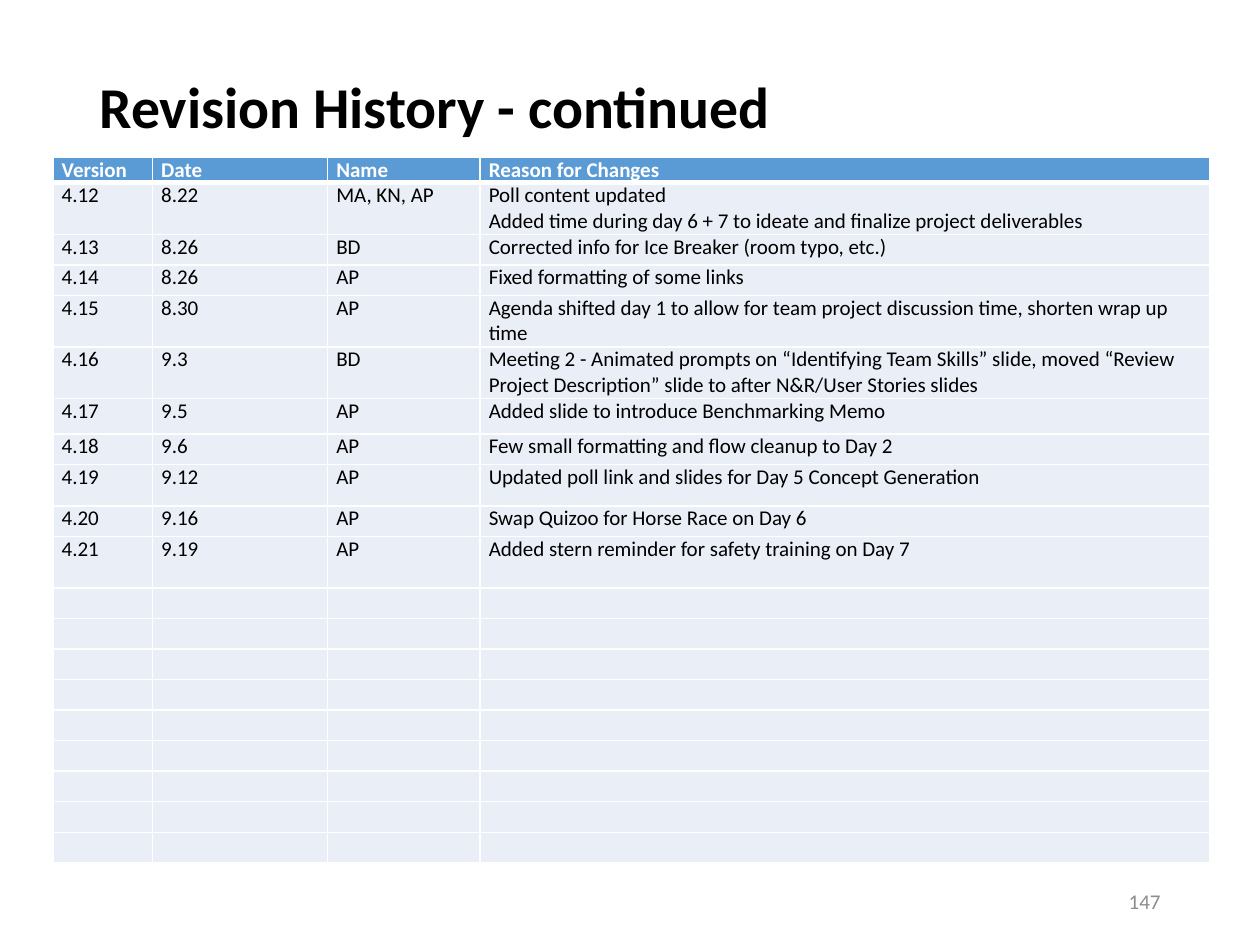
from lxml import etree
from pptx import Presentation
from pptx import util as u
from pptx.dml.color import RGBColor
from pptx.enum import text
from pptx.oxml import ns

BLACK = RGBColor(0x00, 0x00, 0x00)
WHITE = RGBColor(0xFF, 0xFF, 0xFF)
GRAY = RGBColor(0x8C, 0x8C, 0x8C)
HEADER_BLUE = RGBColor(0x5B, 0x9B, 0xD5)
BODY_BLUE = RGBColor(0xEA, 0xEF, 0xF7)

COLUMN_WIDTHS = [0.79, 1.39, 1.21, 5.79]
TABLE_HEIGHT = 5.6
HEADERS = ["Version", "Date", "Name", "Reason for Changes"]
REVISIONS = [
    ("4.12", "8.22", "MA, KN, AP",
     "Poll content updated\n"
     "Added time during day 6 + 7 to ideate and finalize project deliverables"),
    ("4.13", "8.26", "BD", "Corrected info for Ice Breaker (room typo, etc.)"),
    ("4.14", "8.26", "AP", "Fixed formatting of some links"),
    ("4.15", "8.30", "AP",
     "Agenda shifted day 1 to allow for team project discussion time, shorten wrap up time"),
    ("4.16", "9.3", "BD",
     "Meeting 2 - Animated prompts on “Identifying Team Skills” slide, moved “Review "
     "Project Description” slide to after N&R/User Stories slides"),
    ("4.17", "9.5", "AP", "Added slide to introduce Benchmarking Memo"),
    ("4.18", "9.6", "AP", "Few small formatting and flow cleanup to Day 2"),
    ("4.19", "9.12", "AP", "Updated poll link and slides for Day 5 Concept Generation"),
    ("4.20", "9.16", "AP", "Swap Quizoo for Horse Race on Day 6"),
    ("4.21", "9.19", "AP", "Added stern reminder for safety training on Day 7"),
]
EMPTY_ROWS = 9
# Rows not listed here share the remaining table height equally.
SPECIAL_HEIGHTS = {0: 0.2, 1: 0.41, 4: 0.41, 5: 0.41, 6: 0.28, 8: 0.33, 10: 0.41}


def write_text(frame, content, *, font="Calibri", size=12, color=BLACK, bold=False,
               align=text.PP_ALIGN.LEFT, line_spacing=None):
    """Fill a text frame, one paragraph per line of content."""
    for index, line in enumerate(content.split("\n")):
        paragraph = frame.add_paragraph() if index else frame.paragraphs[0]
        paragraph.alignment = align
        if line_spacing:
            paragraph.line_spacing = line_spacing
        if not line:
            # Keeps an empty cell from growing to the default text size.
            etree.SubElement(paragraph._p, ns.qn("a:endParaRPr"), sz=str(size * 100))
            continue
        run = paragraph.add_run()
        run.text = line
        run.font.name = font
        run.font.size = u.Pt(size)
        run.font.bold = bold
        run.font.color.rgb = color


def set_borders(cell, bottom_width):
    """Draw white cell borders; they must precede the fill in the XML."""
    properties = cell._tc.get_or_add_tcPr()
    for side, width in (("L", 1), ("R", 1), ("T", 1), ("B", bottom_width)):
        line = etree.SubElement(properties, ns.qn(f"a:ln{side}"), w=str(u.Pt(width)))
        fill = etree.SubElement(line, ns.qn("a:solidFill"))
        etree.SubElement(fill, ns.qn("a:srgbClr"), val=str(WHITE))


class SlideBuilder:
    def __init__(self, slide, font="Calibri"):
        self.slide = slide
        self.font = font

    def text_box(self, content, left, top, width, height, *,
                 anchor=text.MSO_ANCHOR.MIDDLE, top_inset=0.05, **style):
        shape = self.slide.shapes.add_textbox(*map(u.Inches, (left, top, width, height)))
        frame = shape.text_frame
        frame.word_wrap = True
        frame.vertical_anchor = anchor
        frame.margin_top = u.Inches(top_inset)
        write_text(frame, content, font=self.font, **style)

    def table(self, rows, left, top, column_widths, row_heights):
        table = self.slide.shapes.add_table(
            len(rows), len(column_widths), u.Inches(left), u.Inches(top),
            u.Inches(sum(column_widths)), u.Inches(sum(row_heights))).table
        for column, width in zip(table.columns, column_widths):
            column.width = u.Inches(width)
        for row, height in zip(table.rows, row_heights):
            row.height = u.Inches(height)
        for row_index, values in enumerate(rows):
            for column_index, value in enumerate(values):
                self.cell(table.cell(row_index, column_index), value, row_index == 0)

    def cell(self, cell, value, is_header):
        cell.margin_left = cell.margin_right = u.Inches(0.07)
        cell.margin_top = cell.margin_bottom = 0
        set_borders(cell, 3 if is_header else 1)
        cell.fill.solid()
        cell.fill.fore_color.rgb = HEADER_BLUE if is_header else BODY_BLUE
        write_text(cell.text_frame, value, font=self.font, bold=is_header,
                   color=WHITE if is_header else BLACK)


def main():
    presentation = Presentation()
    presentation.slide_width = u.Inches(10)
    presentation.slide_height = u.Inches(7.5)
    builder = SlideBuilder(presentation.slides.add_slide(presentation.slide_layouts[6]))

    builder.text_box("Revision History - continued", 0.69, 0.4, 8.62, 1.45,
                     anchor=text.MSO_ANCHOR.TOP, top_inset=0.22,
                     size=33, bold=True, line_spacing=0.9)

    rows = [HEADERS, *REVISIONS, *[[""] * len(HEADERS)] * EMPTY_ROWS]
    shared_height = ((TABLE_HEIGHT - sum(SPECIAL_HEIGHTS.values()))
                     / (len(rows) - len(SPECIAL_HEIGHTS)))
    row_heights = [SPECIAL_HEIGHTS.get(index, shared_height) for index in range(len(rows))]
    builder.table(rows, 0.42, 1.25, COLUMN_WIDTHS, row_heights)

    builder.text_box("147", 7.06, 6.95, 2.25, 0.4, color=GRAY, align=text.PP_ALIGN.RIGHT)
    presentation.save("out.pptx")


if __name__ == "__main__":
    main()
